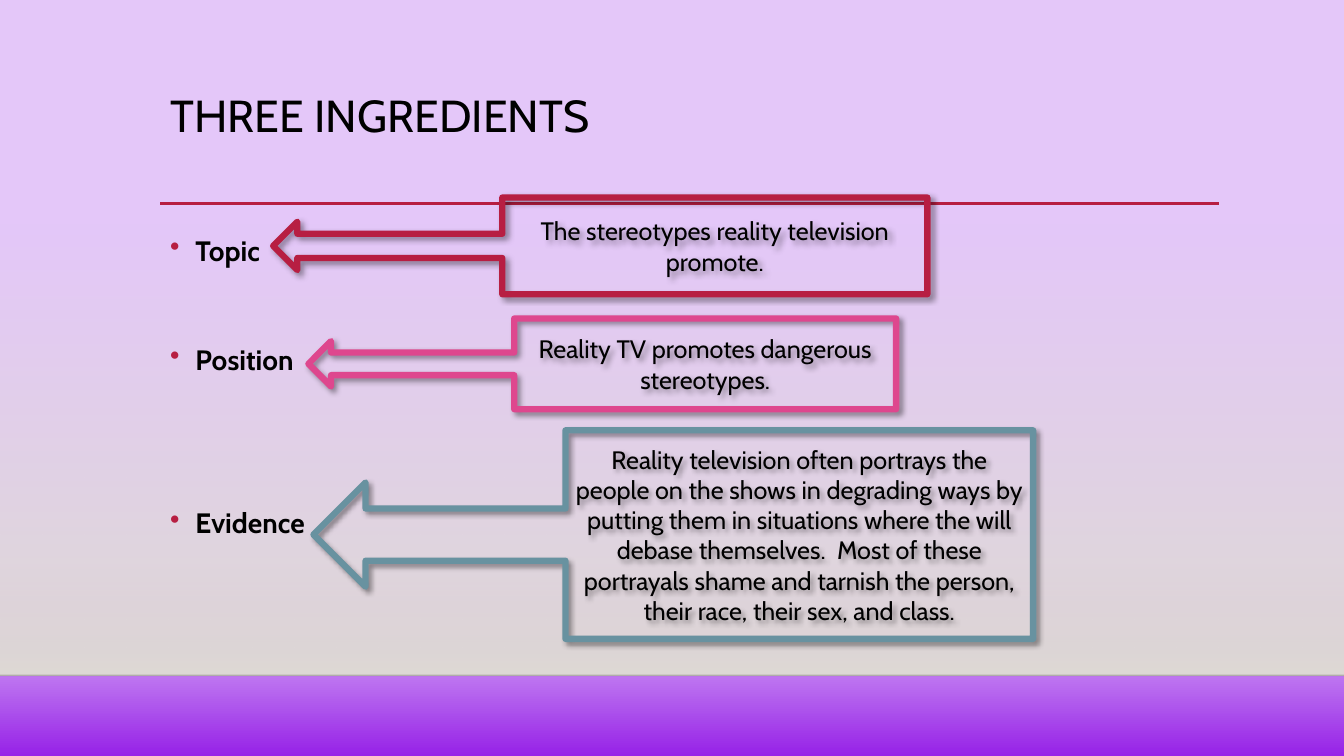
from dataclasses import dataclass
from typing import Any, Optional

import pptx
import pptx.dml.color
import pptx.enum.shapes
import pptx.enum.text
import pptx.oxml
import pptx.oxml.ns
import pptx.util

Pt = pptx.util.Pt
RGB = pptx.dml.color.RGBColor
Align = pptx.enum.text.PP_ALIGN
Anchor = pptx.enum.text.MSO_ANCHOR
Shape = pptx.enum.shapes.MSO_SHAPE
Wire = pptx.enum.shapes.MSO_CONNECTOR
NS = pptx.oxml.ns.nsdecls("a")
qn = pptx.oxml.ns.qn

BLACK = RGB(0, 0, 0)
EDGE = RGB(0, 0, 1)
RED = RGB(0xB7, 0x1E, 0x42)
PINK = RGB(0xDE, 0x47, 0x8E)
TEAL = RGB(0x68, 0x92, 0xA0)
LILAC = RGB(0xE4, 0xC7, 0xF9)
MAUVE = RGB(0xD7, 0xAA, 0xF6)
PURPLE = RGB(0x96, 0x22, 0xE7)
SAND = RGB(0xDF, 0xDB, 0xD5)

WIDE, HIGH = 960, 540
FLOOR = 482.4
LEFT, SPAN = 114.5, 756
TITLE = {"size": Pt(32), "bold": False}
LABEL = {"size": Pt(20), "bold": True}
NOTE = {"size": Pt(18), "bold": False}


@dataclass
class Stop:
    at: int
    color: RGB
    alpha: int = 100


@dataclass
class Rule:
    left: float
    right: float
    top: float
    color: RGB
    width: float
    alpha: int = 100


@dataclass
class Item:
    label: str
    gap: float
    note: str
    color: RGB
    left: float
    top: float
    width: float
    height: float


SKY = [Stop(0, LILAC), Stop(74, LILAC), Stop(83, MAUVE), Stop(100, PURPLE)]
HAZE = [Stop(0, SAND, 0), Stop(100, SAND)]
RULES = [
    Rule(0, WIDE, FLOOR, EDGE, 1, 20),
    Rule(LEFT, 871, 145.3, RED, 2.5),
]
ITEMS = [
    Item("Topic", 0, "The stereotypes reality television promote.",
         RED, 195.1, 141.1, 467.3, 69.1),
    Item("Position", 49, "Reality TV promotes dangerous stereotypes.",
         PINK, 220.3, 227.5, 419.8, 64.8),
    Item("Evidence", 88,
         "Reality television often portrays the people on the shows in "
         "degrading ways by putting them in situations where the will debase "
         "themselves.  Most of these portrayals shame and tarnish the person, "
         "their race, their sex, and class.",
         TEAL, 223.9, 307.4, 514.1, 149),
]


def tint(color: RGB, alpha: int) -> str:
    return (f'<a:srgbClr {NS} val="{color}">'
            f'<a:alpha val="{alpha * 1000}"/></a:srgbClr>')


def fade(fill: Any, root: Any, stops: list[Stop]) -> None:
    """Give the fill found under root a gradient that runs downwards."""
    fill.gradient()
    fill.gradient_angle = 270
    row = root.find(".//" + qn("a:gsLst"))
    for old in list(row):
        row.remove(old)
    for stop in stops:
        row.append(pptx.oxml.parse_xml(
            f'<a:gs {NS} pos="{stop.at * 1000}">'
            f'{tint(stop.color, stop.alpha)}</a:gs>'))


def style(part: Any, text: str, form: dict[str, Any]) -> None:
    run = part.add_run()
    run.text = text
    for name, value in form.items():
        setattr(run.font, name, value)
    run.font.name = "Cabin"
    run.font.color.rgb = BLACK


def frame(slide: Any, top: float, height: float) -> Any:
    box = slide.shapes.add_textbox(Pt(LEFT), Pt(top), Pt(SPAN), Pt(height))
    box.text_frame.word_wrap = True
    return box.text_frame


def mark(part: Any) -> None:
    """Hang a red bullet in front of the paragraph."""
    props = part._p.get_or_add_pPr()
    props.set("marL", str(Pt(18)))
    props.set("indent", str(-Pt(18)))
    for xml in (f'<a:buClr {NS}><a:srgbClr val="{RED}"/></a:buClr>',
                f'<a:buChar {NS} char="•"/>'):
        props.append(pptx.oxml.parse_xml(xml))


def rule(slide: Any, data: Rule) -> None:
    line = slide.shapes.add_connector(
        Wire.STRAIGHT, Pt(data.left), Pt(data.top), Pt(data.right), Pt(data.top))
    line.line.width = Pt(data.width)
    line.line.color.rgb = data.color
    paint = line._element.spPr.find(".//" + qn("a:solidFill"))
    paint.replace(paint[0], pptx.oxml.parse_xml(tint(data.color, data.alpha)))
    line._element.spPr.append(pptx.oxml.parse_xml(f"<a:effectLst {NS}/>"))


def callout(slide: Any, item: Item) -> None:
    shape = slide.shapes.add_shape(
        Shape.LEFT_ARROW_CALLOUT, Pt(item.left), Pt(item.top),
        Pt(item.width), Pt(item.height))
    shape.fill.background()
    shape.line.color.rgb = item.color
    shape.line.width = Pt(4.5)
    shape.shadow.inherit = False
    shape._element.spPr.find(qn("a:effectLst")).append(pptx.oxml.parse_xml(
        f'<a:outerShdw {NS} blurRad="{Pt(4)}" dist="{Pt(3)}" dir="2700000" '
        f'algn="tl" rotWithShape="0">{tint(BLACK, 40)}</a:outerShdw>'))
    text = shape.text_frame
    text.word_wrap = True
    text.vertical_anchor = Anchor.MIDDLE
    part = text.paragraphs[0]
    part.alignment = Align.CENTER
    style(part, item.note, NOTE)


def labels(slide: Any, items: list[Item]) -> None:
    text = frame(slide, 158.4, 271.4)
    part: Optional[Any] = None
    for item in items:
        part = text.add_paragraph() if part else text.paragraphs[0]
        mark(part)
        part.line_spacing = 1.2
        part.space_before = Pt(item.gap)
        style(part, item.label, LABEL)


def main() -> None:
    deck = pptx.Presentation()
    deck.slide_width, deck.slide_height = Pt(WIDE), Pt(HIGH)
    slide = deck.slides.add_slide(deck.slide_layouts[6])
    fade(slide.background.fill, slide.element, SKY)

    panel = slide.shapes.add_shape(
        Shape.RECTANGLE, 0, Pt(159.1), Pt(WIDE), Pt(FLOOR - 159.1))
    panel.shadow.inherit = False
    panel.line.fill.background()
    fade(panel.fill, panel._element, HAZE)

    for data in RULES:
        rule(slide, data)
    head = frame(slide, 63.4, 82.8).paragraphs[0]
    head.line_spacing = 0.9
    style(head, "THREE INGREDIENTS", TITLE)
    labels(slide, ITEMS)
    for item in ITEMS:
        callout(slide, item)
    deck.save("out.pptx")


if __name__ == "__main__":
    main()
